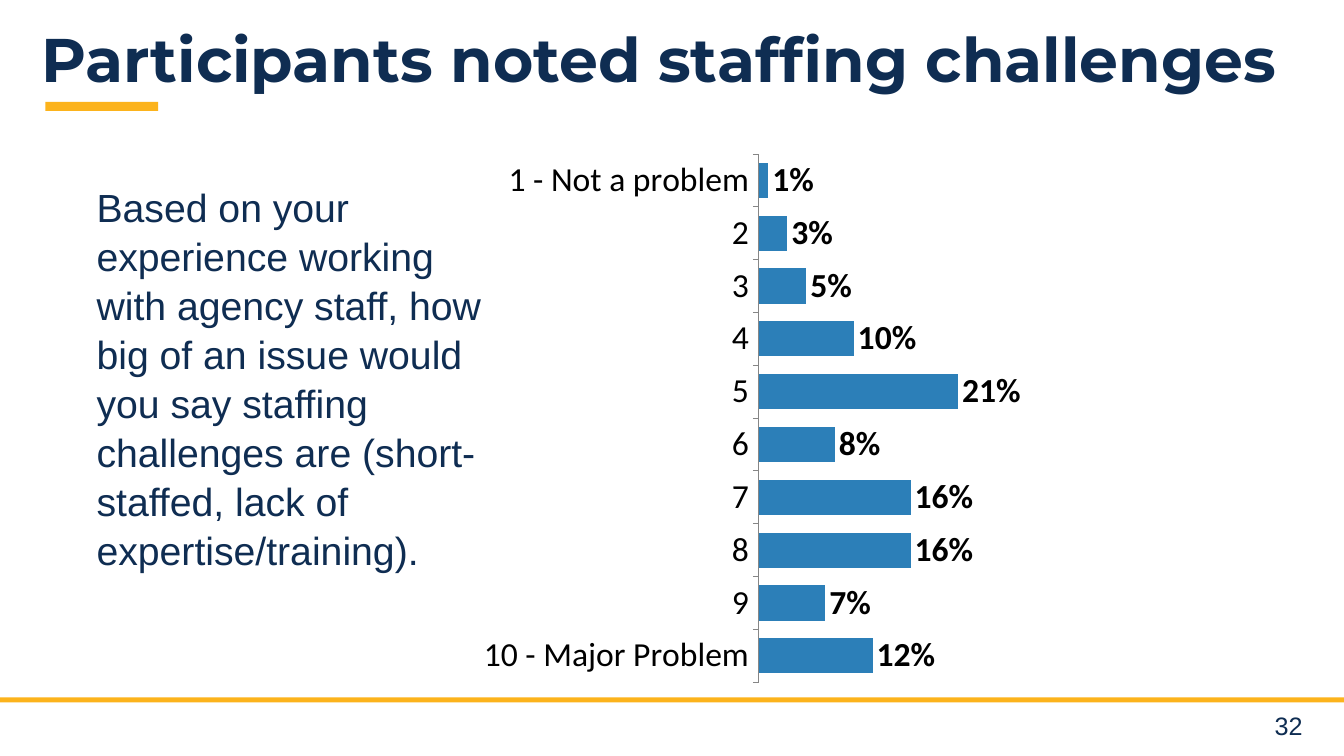
from lxml import etree
from pptx import Presentation
from pptx.chart.data import CategoryChartData
from pptx.dml.color import RGBColor
from pptx.enum.chart import XL_CHART_TYPE, XL_LABEL_POSITION, XL_TICK_MARK
from pptx.enum.shapes import MSO_SHAPE
from pptx.enum.text import MSO_ANCHOR, PP_ALIGN
from pptx.oxml.ns import qn
from pptx.util import Pt

RECTANGLE = MSO_SHAPE.RECTANGLE
BAR_CLUSTERED = XL_CHART_TYPE.BAR_CLUSTERED
OUTSIDE_END = XL_LABEL_POSITION.OUTSIDE_END
TICK_OUTSIDE, TICK_NONE = XL_TICK_MARK.OUTSIDE, XL_TICK_MARK.NONE
TOP, MIDDLE = MSO_ANCHOR.TOP, MSO_ANCHOR.MIDDLE
LEFT, RIGHT = PP_ALIGN.LEFT, PP_ALIGN.RIGHT

COLORS = {
    "navy": "0F2D52",
    "gold": "FCB31C",
    "blue": "2C7FB8",
    "black": "000000",
    "gray": "868686",
}

RATINGS = ["1 - Not a problem", *map(str, range(2, 10)), "10 - Major Problem"]
SHARES = [0.01, 0.03, 0.05, 0.10, 0.21, 0.08, 0.16, 0.16, 0.07, 0.12]
QUESTION = (
    "Based on your experience working with agency staff, how big of an issue "
    "would you say staffing challenges are (short-staffed, lack of "
    "expertise/training)."
)


class SlideBuilder:
    """Holds the style and the current slide; all lengths are in points."""

    def __init__(self, slide, colors):
        self.slide = slide
        self.colors = colors

    def color(self, name):
        return RGBColor.from_string(self.colors[name])

    def style_font(self, font, name, size, color, bold=False):
        font.name = name
        font.size = Pt(size)
        font.bold = bold
        font.color.rgb = self.color(color)

    def rule(self, left, top, width, height):
        bar = self.slide.shapes.add_shape(
            RECTANGLE, Pt(left), Pt(top), Pt(width), Pt(height))
        bar.shadow.inherit = False
        bar.fill.solid()
        bar.fill.fore_color.rgb = self.color("gold")
        bar.line.fill.background()

    def text(self, text, left, top, width, height, size, font="Arial",
             bold=False, align=LEFT, anchor=TOP, spacing=None):
        box = self.slide.shapes.add_textbox(
            Pt(left), Pt(top), Pt(width), Pt(height))
        frame = box.text_frame
        frame.word_wrap = True
        frame.vertical_anchor = anchor
        frame.text = text
        para = frame.paragraphs[0]
        para.alignment = align
        para.line_spacing = spacing
        self.style_font(para.runs[0].font, font, size, "navy", bold)

    def bar_chart(self, categories, values, left, top, width, height, plot):
        data = CategoryChartData(number_format="0%")
        data.categories = categories
        data.add_series("Series 1", values)
        chart = self.slide.shapes.add_chart(
            BAR_CLUSTERED, Pt(left), Pt(top), Pt(width), Pt(height), data).chart
        chart.has_title = False
        chart.has_legend = False
        self.style_font(chart.font, "Arial", 18, "navy")

        # Bars and their labels
        bars = chart.plots[0]
        bars.gap_width = 50
        bars.vary_by_categories = False
        fill = bars.series[0].format.fill
        fill.solid()
        fill.fore_color.rgb = self.color("blue")
        bars.has_data_labels = True
        labels = bars.data_labels
        labels.show_value = True
        labels.number_format = "0%"
        labels.number_format_is_linked = False
        labels.position = OUTSIDE_END
        self.style_font(labels.font, "Calibri", 24, "black", bold=True)

        # Axes
        rating_axis = chart.category_axis
        rating_axis.reverse_order = True
        rating_axis.has_major_gridlines = False
        rating_axis.major_tick_mark = TICK_OUTSIDE
        rating_axis.minor_tick_mark = TICK_NONE
        rating_axis.format.line.color.rgb = self.color("gray")
        rating_axis.format.line.width = Pt(0.75)
        self.style_font(rating_axis.tick_labels.font, "Calibri", 24, "black")
        share_axis = chart.value_axis
        share_axis.minimum_scale = 0
        share_axis.maximum_scale = 1
        share_axis.has_major_gridlines = False
        share_axis.visible = False
        self.place_plot(chart, plot)

    def place_plot(self, chart, plot):
        area = chart.element.find(".//" + qn("c:plotArea"))
        layout = area.find(qn("c:layout"))
        if layout is None:
            layout = etree.Element(qn("c:layout"))
            area.insert(0, layout)
        manual = etree.SubElement(layout, qn("c:manualLayout"))
        settings = [("layoutTarget", "inner"), ("xMode", "edge"),
                    ("yMode", "edge"), *zip("xywh", plot)]
        for tag, value in settings:
            etree.SubElement(manual, qn("c:" + tag)).set("val", str(value))


def main():
    deck = Presentation()
    deck.slide_width, deck.slide_height = Pt(960), Pt(540)
    page = SlideBuilder(deck.slides.add_slide(deck.slide_layouts[6]), COLORS)

    # Gold rules and page number
    page.rule(-13, 498.2, 983, 3.6)
    page.rule(32.4, 72.7, 80.6, 6.5)
    page.text("32", 869.8, 504, 67.7, 25.2, 18, align=RIGHT)

    # Title
    page.text("Participants noted staffing challenges", 22.3, 17.3, 915.8, 61.2,
              44, font="Montserrat", bold=True, spacing=0.9)

    # Rating chart
    page.bar_chart(RATINGS, SHARES, 326.9, 102.2, 915.8, 393.1,
                   plot=(0.235, 0.02, 0.74, 0.96))

    # Survey question
    page.text(QUESTION, 61.9, 130.3, 294.5, 278.6, 28, anchor=MIDDLE,
              spacing=1.04)

    deck.save("out.pptx")


if __name__ == "__main__":
    main()
